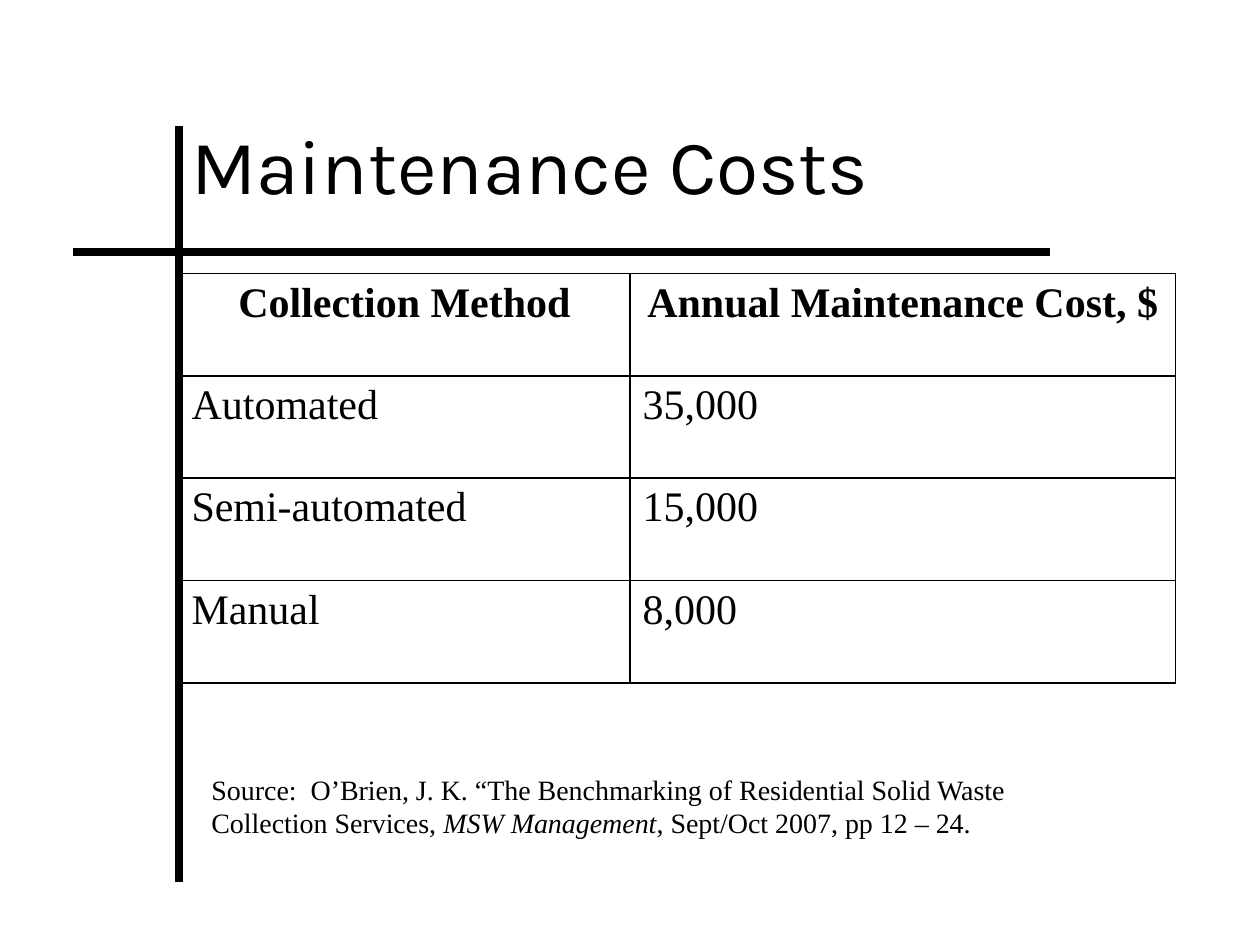
from dataclasses import dataclass
from lxml import etree
from pptx import Presentation
from pptx.dml.color import RGBColor
from pptx.enum import shapes, text
from pptx.oxml.ns import qn
from pptx.util import Inches, Pt


@dataclass(frozen=True)
class Theme:
    ink: RGBColor = RGBColor(0, 0, 0)
    head: str = "Karla"
    body: str = "Times New Roman"
    title: int = 44
    cell: int = 24
    note: int = 16
    rule: float = 4.5
    edge: float = 1


@dataclass(frozen=True)
class Rule:
    x1: float
    y1: float
    x2: float
    y2: float


@dataclass(frozen=True)
class Box:
    x: float
    y: float
    w: float
    h: float


THEME = Theme()
RULES = [Rule(0.58, 2, 8.33, 2), Rule(1.42, 1, 1.42, 7)]
COLS = [3.58, 4.33]
ROWS = [
    ("Collection Method", "Annual Maintenance Cost, $"),
    ("Automated", "35,000"),
    ("Semi-automated", "15,000"),
    ("Manual", "8,000"),
]
SOURCE = [
    ("Source:  O’Brien, J. K. “The Benchmarking of Residential Solid Waste "
     "Collection Services, ", False),
    ("MSW Management", True),
    (", Sept/Oct 2007, pp 12 – 24.", False),
]


def style(para, face: str, size: int, bold: bool = False) -> None:
    font = para.font
    font.name, font.size, font.bold = face, Pt(size), bold
    font.color.rgb = THEME.ink


def add_rule(slide, rule: Rule) -> None:
    line = slide.shapes.add_connector(
        shapes.MSO_CONNECTOR.STRAIGHT,
        *map(Inches, (rule.x1, rule.y1, rule.x2, rule.y2)))
    line.line.color.rgb = THEME.ink
    line.line.width = Pt(THEME.rule)
    etree.SubElement(line._element.spPr, qn("a:effectLst"))


def add_text(slide, box: Box, runs: list, face: str, size: int,
             anchor=text.MSO_ANCHOR.TOP) -> None:
    shape = slide.shapes.add_textbox(
        *map(Inches, (box.x, box.y, box.w, box.h)))
    frame = shape.text_frame
    frame.word_wrap = True
    frame.vertical_anchor = anchor
    para = frame.paragraphs[0]
    style(para, face, size)
    for words, slant in runs:
        run = para.add_run()
        run.text = words
        if slant:
            run.font.italic = True


def add_edges(cell) -> None:
    props = cell._tc.get_or_add_tcPr()
    for i, side in enumerate(("lnL", "lnR", "lnT", "lnB")):
        # Borders come before the fill in the cell properties
        line = etree.Element(qn(f"a:{side}"), w=str(Pt(THEME.edge)))
        fill = etree.SubElement(line, qn("a:solidFill"))
        etree.SubElement(fill, qn("a:srgbClr"), val=str(THEME.ink))
        props.insert(i, line)


def add_grid(slide, box: Box) -> None:
    grid = slide.shapes.add_table(
        len(ROWS), len(COLS),
        *map(Inches, (box.x, box.y, box.w, box.h))).table
    grid.first_row = grid.horz_banding = False
    for col, width in zip(grid.columns, COLS):
        col.width = Inches(width)
    for r, row in enumerate(ROWS):
        for c, words in enumerate(row):
            cell = grid.cell(r, c)
            cell.text = words
            cell.fill.background()
            add_edges(cell)
            para = cell.text_frame.paragraphs[0]
            style(para, THEME.body, THEME.cell, bold=r == 0)
            if r == 0:
                para.alignment = text.PP_ALIGN.CENTER


def main() -> None:
    deck = Presentation()
    deck.slide_width, deck.slide_height = Inches(10), Inches(7.5)
    slide = deck.slides.add_slide(deck.slide_layouts[6])

    # Crossing rules
    for rule in RULES:
        add_rule(slide, rule)

    # Title, cost table and source
    add_text(slide, Box(1.42, 0.67, 8.5, 1.25),
             [("Maintenance Costs", False)], THEME.head, THEME.title,
             text.MSO_ANCHOR.MIDDLE)
    add_grid(slide, Box(1.42, 2.17, sum(COLS), 3.25))
    add_text(slide, Box(1.58, 6.08, 7, 0.63), SOURCE,
             THEME.body, THEME.note)
    deck.save("out.pptx")


if __name__ == "__main__":
    main()
